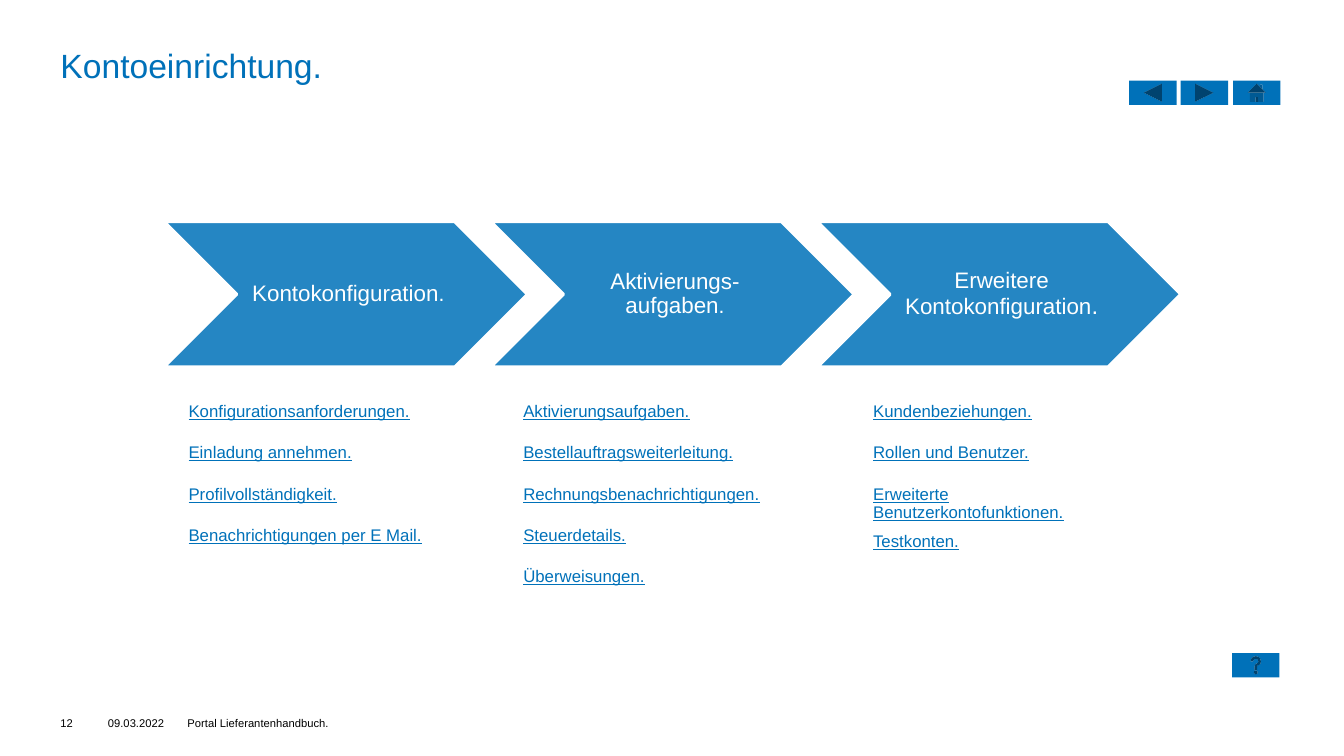
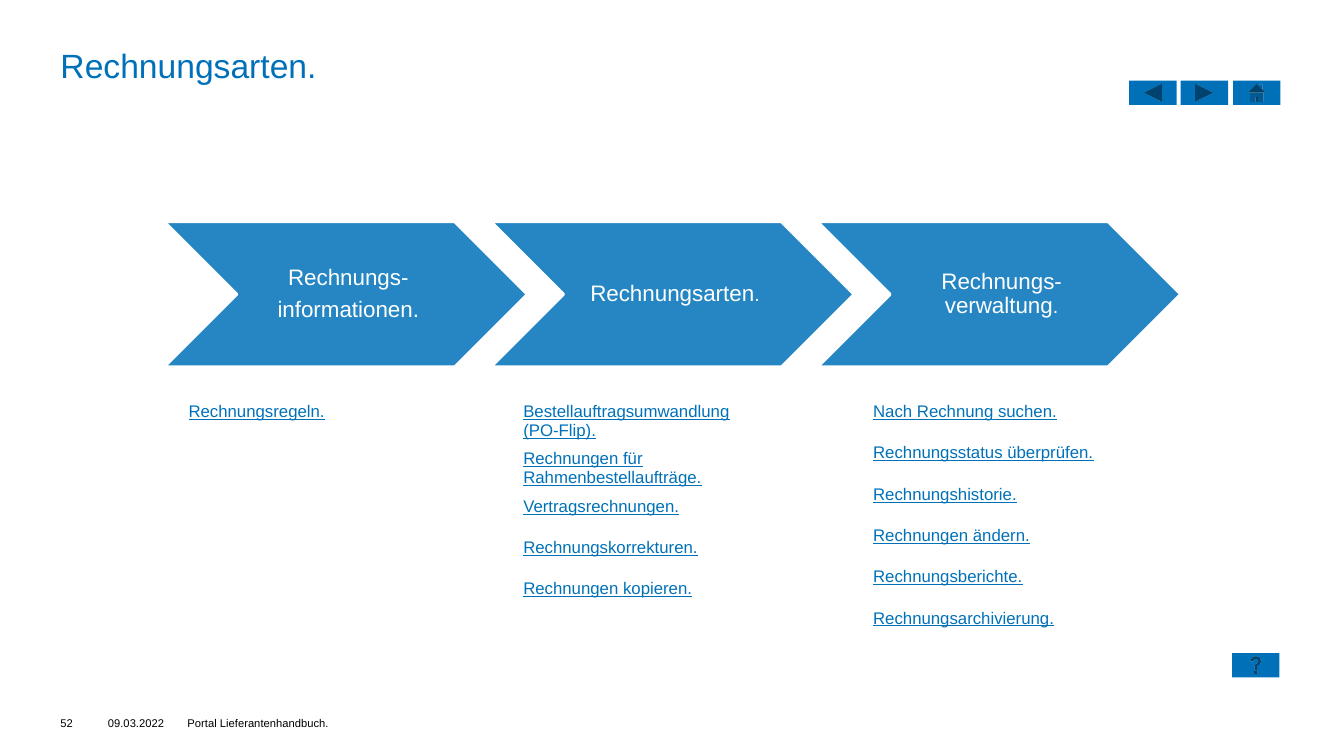
from pptx import Presentation
from pptx.dml.color import RGBColor
from pptx.enum.shapes import MSO_SHAPE
from pptx.enum.text import MSO_ANCHOR, PP_ALIGN
from pptx.util import Inches, Pt

COLORS = {"blue": "0071B9", "chevron": "2586C3", "white": "FFFFFF", "black": "000000"}
FONT = "Arial"
FOOTER_TOP = 6.85
CHEVRON_LEFT, CHEVRON_STEP = 1.63, 3.24
LIST_LEFTS = (1.77, 5.09, 8.56)
ROW_HEIGHT = 0.41
BUTTONS = (
    (MSO_SHAPE.ACTION_BUTTON_BACK_OR_PREVIOUS, 11.2, 0.8),
    (MSO_SHAPE.ACTION_BUTTON_FORWARD_OR_NEXT, 11.71, 0.8),
    (MSO_SHAPE.ACTION_BUTTON_HOME, 12.23, 0.8),
    (MSO_SHAPE.ACTION_BUTTON_HELP, 12.22, 6.48),
)

PAGES = (
    {
        "title": "Kontoeinrichtung.",
        "number": "12",
        "steps": (
            ("Kontokonfiguration.", 15, (
                "Konfigurationsanforderungen.",
                "Einladung annehmen.",
                "Profilvollständigkeit.",
                "Benachrichtigungen per E Mail.",
            )),
            ("Aktivierungs-aufgaben.", 15, (
                "Aktivierungsaufgaben.",
                "Bestellauftragsweiterleitung.",
                "Rechnungsbenachrichtigungen.",
                "Steuerdetails.",
                "Überweisungen.",
            )),
            ("Erweitere Kontokonfiguration.", 17, (
                "Kundenbeziehungen.",
                "Rollen und Benutzer.",
                "Erweiterte\nBenutzerkontofunktionen.",
                "Testkonten.",
            )),
        ),
    },
    {
        "title": "Rechnungsarten.",
        "number": "52",
        "steps": (
            ("Rechnungs-\ninformationen.", 16, ("Rechnungsregeln.",)),
            ("Rechnungsarten.", 14, (
                "Bestellauftragsumwandlung (PO-Flip).",
                "Rechnungen für Rahmenbestellaufträge.",
                "Vertragsrechnungen.",
                "Rechnungskorrekturen.",
                "Rechnungen kopieren.",
            )),
            ("Rechnungs-verwaltung.", 14, (
                "Nach Rechnung suchen.",
                "Rechnungsstatus überprüfen.",
                "Rechnungshistorie.",
                "Rechnungen ändern.",
                "Rechnungsberichte.",
                "Rechnungsarchivierung.",
            )),
        ),
    },
)


def color(name):
    return RGBColor.from_string(COLORS[name])


def write(frame, text, *, size, fill, align=PP_ALIGN.LEFT, underline=None,
          line_spacing=None, space_after=None, stop_size=None):
    for index, line in enumerate(text.split("\n")):
        paragraph = frame.paragraphs[0] if index == 0 else frame.add_paragraph()
        paragraph.alignment = align
        paragraph.line_spacing = line_spacing
        paragraph.space_after = space_after
        pieces = [(line, size)]
        if stop_size and line.endswith("."):
            pieces = [(line[:-1], size), (".", stop_size)]
        for piece, piece_size in pieces:
            span = paragraph.add_run()
            span.text = piece
            span.font.name = FONT
            span.font.size = Pt(piece_size)
            span.font.color.rgb = color(fill)
            span.font.underline = underline


def set_frame(frame, anchor, margins):
    frame.word_wrap = True
    frame.vertical_anchor = anchor
    (frame.margin_left, frame.margin_top,
     frame.margin_right, frame.margin_bottom) = map(Inches, margins)


def add_text(page, text, left, top, width, height, *, anchor=MSO_ANCHOR.TOP, **style):
    box = page.shapes.add_textbox(*map(Inches, (left, top, width, height)))
    set_frame(box.text_frame, anchor, (0, 0, 0, 0))
    write(box.text_frame, text, **style)


def add_shape(page, kind, left, top, width, height, fill):
    shape = page.shapes.add_shape(kind, *map(Inches, (left, top, width, height)))
    shape.shadow.inherit = False
    shape.fill.solid()
    shape.fill.fore_color.rgb = color(fill)
    shape.line.fill.background()
    return shape


def add_chevron(page, text, stop_size, left):
    shape = add_shape(page, MSO_SHAPE.CHEVRON, left, 2.2, 3.6, 1.44, "chevron")
    shape.line.color.rgb = color("white")
    shape.line.width = Pt(2)
    set_frame(shape.text_frame, MSO_ANCHOR.MIDDLE, (0.07, 0.02, 0.02, 0.02))
    write(shape.text_frame, text, size=16, fill="white", align=PP_ALIGN.CENTER,
          line_spacing=0.9, space_after=Pt(5.5), stop_size=stop_size)


def add_topic_list(page, topics, left):
    table = page.shapes.add_table(
        len(topics), 1, Inches(left), Inches(3.94),
        Inches(2.6), Inches(ROW_HEIGHT * len(topics))).table
    table.first_row = False
    table.horz_banding = False
    for row, topic in enumerate(topics):
        cell = table.cell(row, 0)
        cell.fill.background()
        cell.margin_bottom = Inches(0.02)
        write(cell.text_frame, topic, size=12, fill="blue", underline=True)


def add_frame(page, title, number):
    add_text(page, title, 0.6, 0.45, 12.12, 0.47, size=24, fill="blue")
    footers = ((number, 0.6, 0.39), ("09.03.2022", 1.07, 0.71),
               ("Portal Lieferantenhandbuch.", 1.86, 7.17))
    for text, left, width in footers:
        add_text(page, text, left, FOOTER_TOP, width, 0.39,
                 anchor=MSO_ANCHOR.BOTTOM, size=8, fill="black")
    for kind, left, top in BUTTONS:
        add_shape(page, kind, left, top, 0.47, 0.24, "blue")


def main():
    deck = Presentation()
    deck.slide_width, deck.slide_height = Inches(13.33), Inches(7.5)
    for content in PAGES:
        page = deck.slides.add_slide(deck.slide_layouts[6])
        add_frame(page, content["title"], content["number"])
        for index, (label, stop_size, topics) in enumerate(content["steps"]):
            add_chevron(page, label, stop_size, CHEVRON_LEFT + index * CHEVRON_STEP)
            add_topic_list(page, topics, LIST_LEFTS[index])
    deck.save("out.pptx")


if __name__ == "__main__":
    main()
